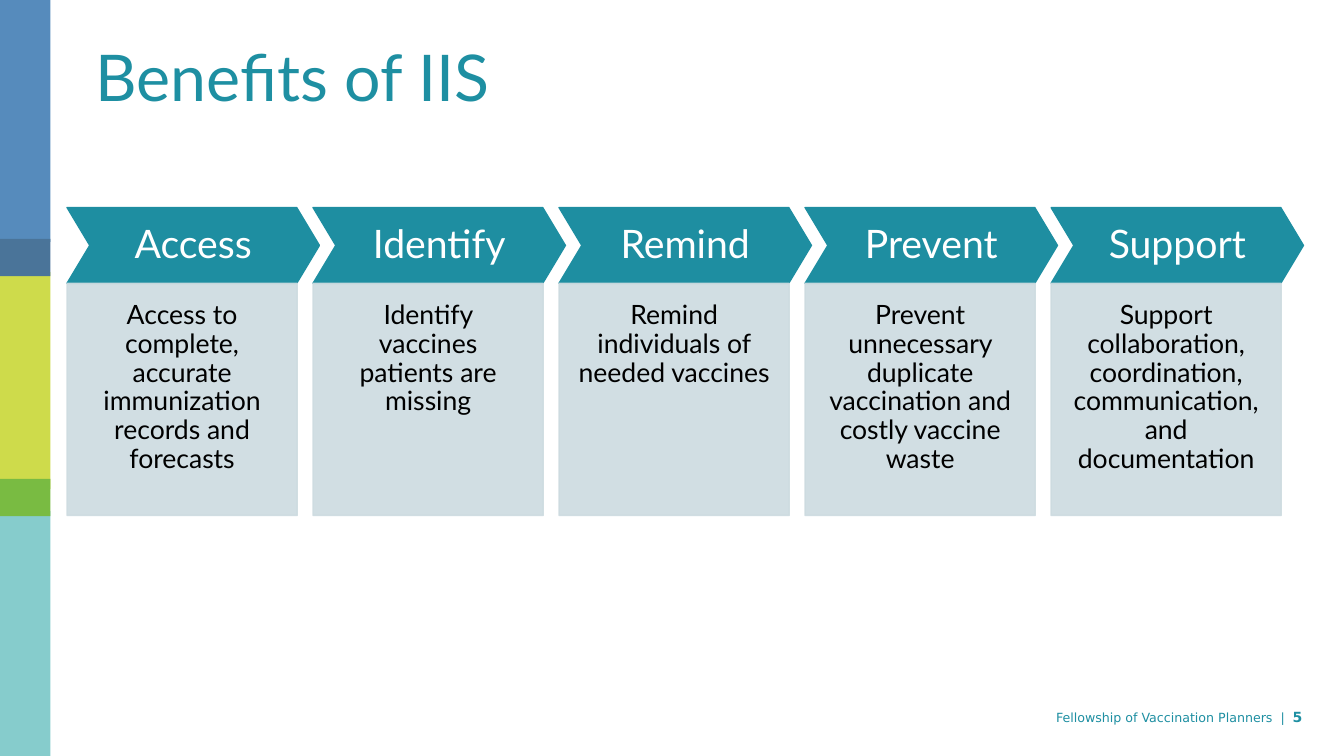
from typing import Any, NamedTuple

from lxml.etree import SubElement
from pptx import Presentation
from pptx.dml.color import RGBColor
from pptx.enum.shapes import MSO_SHAPE
from pptx.enum.text import MSO_ANCHOR, MSO_AUTO_SIZE, PP_ALIGN
from pptx.oxml.ns import qn
from pptx.util import Cm, Pt

TEAL = RGBColor(0x1E, 0x8F, 0xA2)
CHEVRON_TEAL = RGBColor(0x1E, 0x8E, 0xA1)
CARD_GREY = RGBColor(0xCD, 0xDB, 0xE0)
BLUE = RGBColor(0x56, 0x8B, 0xBC)
DARK_BLUE = RGBColor(0x4A, 0x74, 0x99)
LIME = RGBColor(0xCE, 0xDB, 0x4B)
GREEN = RGBColor(0x79, 0xBB, 0x42)
AQUA = RGBColor(0x86, 0xCC, 0xCC)
WHITE = RGBColor(0xFF, 0xFF, 0xFF)
BLACK = RGBColor(0, 0, 0)

HEADING_FONT = "Lato"
FOOTER_FONT = "DejaVu Sans"

RAIL_WIDTH = 1.27
FIRST_LEFT, PITCH = 1.69, 6.2
CHEVRON_TOP, CHEVRON_WIDTH, CHEVRON_HEIGHT = 5.23, 6.36, 1.91
CARD_WIDTH, CARD_HEIGHT = 5.8, 5.85


class Band(NamedTuple):
    top: float
    height: float
    colour: RGBColor


class Benefit(NamedTuple):
    heading: str
    detail: str


class Frame(NamedTuple):
    """Left, top, width and height in centimetres."""
    left: float
    top: float
    width: float
    height: float


BANDS = [
    Band(12.88, 6.17, AQUA),
    Band(6.86, 5.46, LIME),
    Band(0, 6.1, BLUE),
    Band(6.02, 0.94, DARK_BLUE),
    Band(12.07, 0.94, GREEN),
]

BENEFITS = [
    Benefit("Access", "Access to complete, accurate immunization records and forecasts"),
    Benefit("Identify", "Identify vaccines patients are missing"),
    Benefit("Remind", "Remind individuals of needed vaccines"),
    Benefit("Prevent", "Prevent unnecessary duplicate vaccination and costly vaccine waste"),
    Benefit("Support", "Support collaboration, coordination, communication, and documentation"),
]


def apply(target: Any, values: dict[str, Any]) -> None:
    """Set every named attribute on the target."""
    for name, value in values.items():
        setattr(target, name, value)


def place(shape: Any, frame: Frame) -> None:
    apply(shape, {name: Cm(length) for name, length in frame._asdict().items()})


def add_span(para: Any, text: str, font: str, size: float, colour: RGBColor,
             bold: bool = False) -> None:
    span = para.add_run()
    span.text = text
    apply(span.font, {"name": font, "size": Pt(size), "bold": bold})
    span.font.color.rgb = colour


def add_block(page: Any, kind: MSO_SHAPE, frame: Frame, colour: RGBColor,
              outlined: bool = False) -> Any:
    block = page.shapes.add_shape(kind, *map(Cm, frame))
    block.shadow.inherit = False
    block.fill.solid()
    block.fill.fore_color.rgb = colour
    if outlined:
        block.line.color.rgb = colour
        block.line.width = Pt(1)
    else:
        block.line.fill.background()
    return block


def set_opacity(block: Any, percent: int) -> None:
    """Make both fill and outline partly transparent."""
    for colour in block._element.spPr.iter(qn("a:srgbClr")):
        SubElement(colour, qn("a:alpha"), val=str(percent * 1000))


def write_centred(block: Any, text: str, size: float, colour: RGBColor,
                  anchor: MSO_ANCHOR, side: float, bottom: float) -> None:
    frame = block.text_frame
    apply(frame, {
        "word_wrap": True,
        "vertical_anchor": anchor,
        "margin_left": Cm(side),
        "margin_right": Cm(side),
        "margin_top": Cm(side),
        "margin_bottom": Cm(bottom),
    })
    para = frame.paragraphs[0]
    apply(para, {"alignment": PP_ALIGN.CENTER, "line_spacing": 0.9})
    add_span(para, text, HEADING_FONT, size, colour)


def add_benefit(page: Any, benefit: Benefit, left: float) -> None:
    chevron = add_block(page, MSO_SHAPE.CHEVRON,
                        Frame(left, CHEVRON_TOP, CHEVRON_WIDTH, CHEVRON_HEIGHT),
                        CHEVRON_TEAL, outlined=True)
    chevron.adjustments[0] = 0.3
    write_centred(chevron, benefit.heading, 28, WHITE, MSO_ANCHOR.MIDDLE, 0.23, 0.23)

    card = add_block(page, MSO_SHAPE.RECTANGLE,
                     Frame(left, CHEVRON_TOP + CHEVRON_HEIGHT, CARD_WIDTH, CARD_HEIGHT),
                     CARD_GREY, outlined=True)
    set_opacity(card, 90)
    write_centred(card, benefit.detail, 19, BLACK, MSO_ANCHOR.TOP, 0.46, 0.91)


def add_title(page: Any) -> None:
    title = page.shapes.title
    place(title, Frame(2.16, 1.02, 15.32, 2.69))
    apply(title.text_frame, {
        "word_wrap": True,
        "auto_size": MSO_AUTO_SIZE.NONE,
        "vertical_anchor": MSO_ANCHOR.TOP,
    })
    para = title.text_frame.paragraphs[0]
    apply(para, {"alignment": PP_ALIGN.LEFT, "line_spacing": 0.9})
    add_span(para, "Benefits of IIS", HEADING_FONT, 46, TEAL)


def add_footer(page: Any) -> None:
    box = page.shapes.add_textbox(*map(Cm, Frame(22.83, 17.73, 10.24, 0.69)))
    box.text_frame.word_wrap = True
    para = box.text_frame.paragraphs[0]
    para.alignment = PP_ALIGN.RIGHT
    add_span(para, "Fellowship of Vaccination Planners  |  ", FOOTER_FONT, 9, TEAL)
    add_span(para, "5", FOOTER_FONT, 10, TEAL, bold=True)


def main() -> None:
    deck = Presentation()
    apply(deck, {"slide_width": Cm(33.87), "slide_height": Cm(19.05)})
    page = deck.slides.add_slide(deck.slide_layouts.get_by_name("Title Only"))

    add_footer(page)
    for band in BANDS:
        add_block(page, MSO_SHAPE.RECTANGLE,
                  Frame(0, band.top, RAIL_WIDTH, band.height), band.colour)
    add_title(page)
    for column, benefit in enumerate(BENEFITS):
        add_benefit(page, benefit, FIRST_LEFT + column * PITCH)

    deck.save("out.pptx")


if __name__ == "__main__":
    main()
